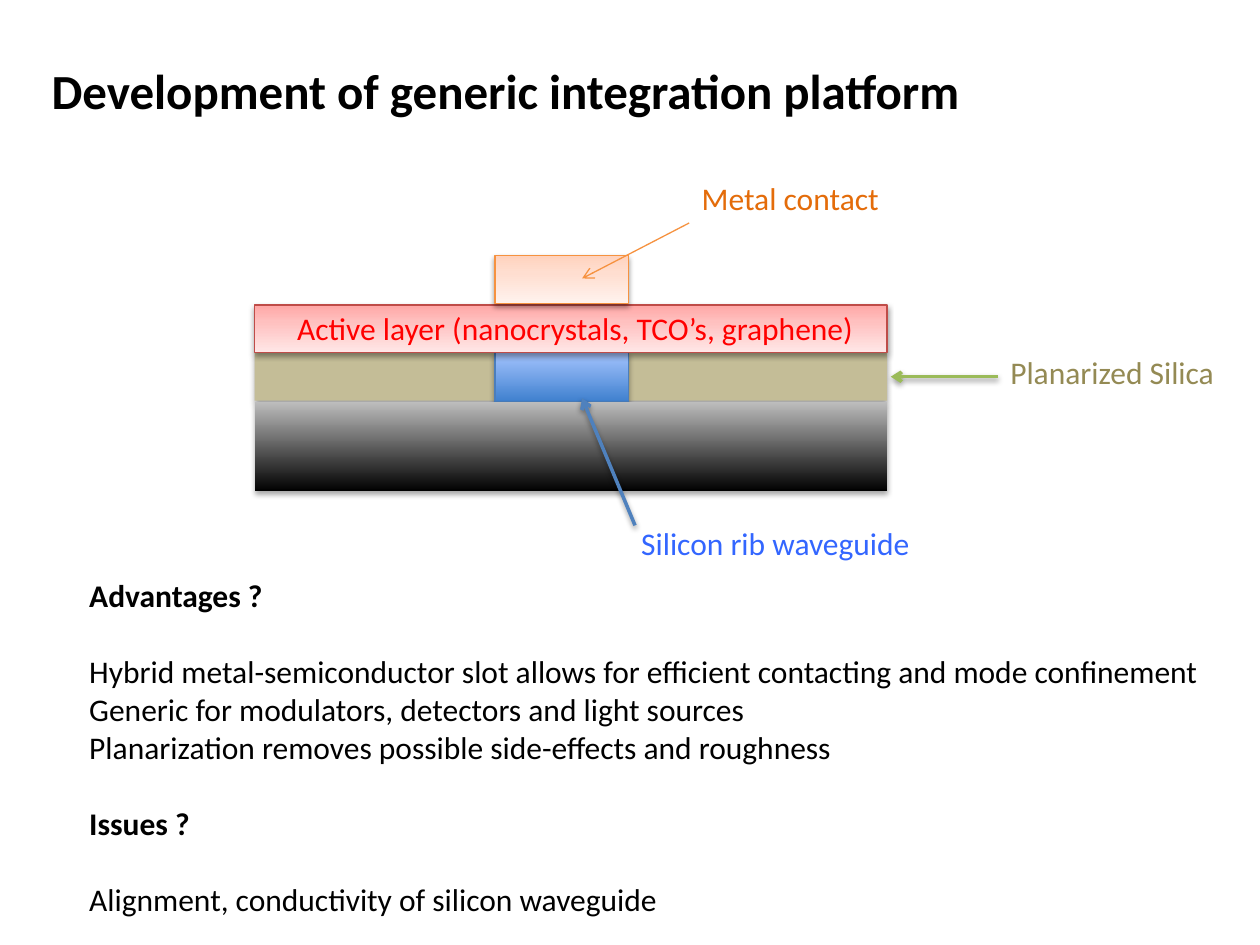
from dataclasses import dataclass
from lxml.etree import SubElement as Sub
from pptx import Presentation
from pptx.dml.color import RGBColor as RGB
from pptx.enum.shapes import MSO_CONNECTOR as Conn, MSO_SHAPE as Shape
from pptx.enum.text import MSO_ANCHOR as Anchor, PP_ALIGN as Align
from pptx.oxml.ns import qn
from pptx.util import Inches, Pt


@dataclass(frozen=True)
class Theme:
    font: str = "Calibri"
    head: int = 28
    body: int = 18
    ink: str = "000000"
    silica: str = "C4BD97"
    olive: str = "948A54"
    green: str = "9BBB59"
    blue: str = "3366FF"
    steel: str = "4F81BD"
    rib_edge: str = "4B7EBC"
    red: str = "FF0000"
    red_edge: str = "BF4C48"
    orange: str = "E46C0A"
    metal_edge: str = "F69240"
    rib: tuple = ((0, "A4C4FF"), (100, "3F80CE"))
    base: tuple = ((0, "BDBDBD"), (100, "000000"))
    active: tuple = ((0, "FFA6A5"), (35, "FFC0BF"), (100, "FFE7E7"))
    metal: tuple = ((0, "FFD2BD"), (35, "FFDED0"), (100, "FFF2ED"))


theme = Theme()
SOFT, FIRM = (35, 1.8), (38, 1.6)  # shadow opacity in percent, distance in points


def write(frame, lines, anchor=Anchor.TOP):
    """Fill a text frame with (text, size, colour, bold, space before) lines."""
    frame.word_wrap = True
    frame.vertical_anchor = anchor
    for i, (text, size, color, bold, gap) in enumerate(lines):
        para = frame.add_paragraph() if i else frame.paragraphs[0]
        para.alignment = Align.LEFT
        para.space_before = Pt(gap)
        run = para.add_run()
        run.text = text
        run.font.name, run.font.size, run.font.bold = theme.font, Pt(size), bold
        run.font.color.rgb = RGB.from_string(color)


def shade(item, cast):
    """Replace the inherited effects by one downward shadow, or by none."""
    props = item._element.spPr
    effect = Sub(props, qn("a:effectLst"))
    if cast:
        alpha, dist = cast
        drop = Sub(effect, qn("a:outerShdw"), blurRad=str(Pt(3.15)),
                   dist=str(Pt(dist)), dir="5400000", rotWithShape="0")
        tint = Sub(drop, qn("a:srgbClr"), val=theme.ink)
        Sub(tint, qn("a:alpha"), val=str(alpha * 1000))


deck = Presentation()
deck.slide_width, deck.slide_height = Inches(10), Inches(7.5)
slide = deck.slides.add_slide(deck.slide_layouts[5])
shapes = slide.shapes

title = shapes.title
title.left, title.top = Inches(0.31), Inches(0.43)
title.width, title.height = Inches(8.44), Inches(0.57)
write(title.text_frame,
      [("Development of generic integration platform", theme.head, theme.ink, True, 0)])

# Layer stack: the wide layers share one column, rib and contact another
wide, slim = (2.02, 5.02), (3.93, 1.06)
layers = [
    (wide, 2.8, 0.38, theme.silica, None, SOFT),
    (slim, 2.8, 0.39, theme.rib, theme.rib_edge, SOFT),
    (wide, 3.19, 0.71, theme.base, None, SOFT),
    (wide, 2.42, 0.38, theme.active, theme.red_edge, FIRM),
    (slim, 2.03, 0.38, theme.metal, theme.metal_edge, FIRM),
]
for (left, width), top, height, paint, edge, cast in layers:
    layer = shapes.add_shape(Shape.RECTANGLE, Inches(left), Inches(top),
                             Inches(width), Inches(height))
    if isinstance(paint, str):
        layer.fill.solid()
        layer.fill.fore_color.rgb = RGB.from_string(paint)
    else:
        layer.fill.gradient()
        layer.fill.gradient_angle = 270
        stops = layer._element.spPr.find(".//" + qn("a:gsLst"))
        for stop in list(stops):
            stops.remove(stop)
        for pos, color in paint:
            stop = Sub(stops, qn("a:gs"), pos=str(pos * 1000))
            Sub(stop, qn("a:srgbClr"), val=color)
    if edge:
        layer.line.color.rgb = RGB.from_string(edge)
        layer.line.width = Pt(0.75)
    else:
        layer.line.fill.background()
    shade(layer, cast)

arrows = [
    ((5.04, 4.17), (4.62, 3.16), theme.steel, 2, FIRM),
    ((7.92, 2.99), (7.07, 2.99), theme.green, 2, FIRM),
    ((5.47, 1.77), (4.62, 2.21), theme.metal_edge, 0.75, None),
]
for start, end, color, weight, cast in arrows:
    arrow = shapes.add_connector(Conn.STRAIGHT, *map(Inches, start + end))
    arrow.line.color.rgb = RGB.from_string(color)
    arrow.line.width = Pt(weight)
    Sub(arrow._element.spPr.find(qn("a:ln")), qn("a:tailEnd"), type="arrow")
    shade(arrow, cast)

labels = [
    ("Planarized Silica", 7.92, 2.75, 2, theme.olive),
    ("Silicon rib waveguide", 4.99, 4.11, 3.35, theme.blue),
    ("Active layer (nanocrystals, TCO’s, graphene)", 2.26, 2.4, 4.79, theme.red),
    ("Metal contact", 5.47, 1.37, 3.35, theme.orange),
]
for text, left, top, width, color in labels:
    label = shapes.add_textbox(Inches(left), Inches(top), Inches(width), Inches(0.4))
    write(label.text_frame, [(text, theme.body, color, False, 0)])

# Each gap is one line of body text
notes = [
    ("Advantages ?", True, 0),
    ("Hybrid metal-semiconductor slot allows for efficient contacting and mode confinement",
     False, 22),
    ("Generic for modulators, detectors and light sources", False, 0),
    ("Planarization removes possible side-effects and roughness", False, 0),
    ("Issues ?", True, 22),
    ("Alignment, conductivity of silicon waveguide", False, 22),
]
box = shapes.add_textbox(Inches(0.61), Inches(4.52), Inches(9.09), Inches(2.83))
write(box.text_frame,
      [(text, theme.body, theme.ink, bold, gap) for text, bold, gap in notes])

deck.save("out.pptx")
